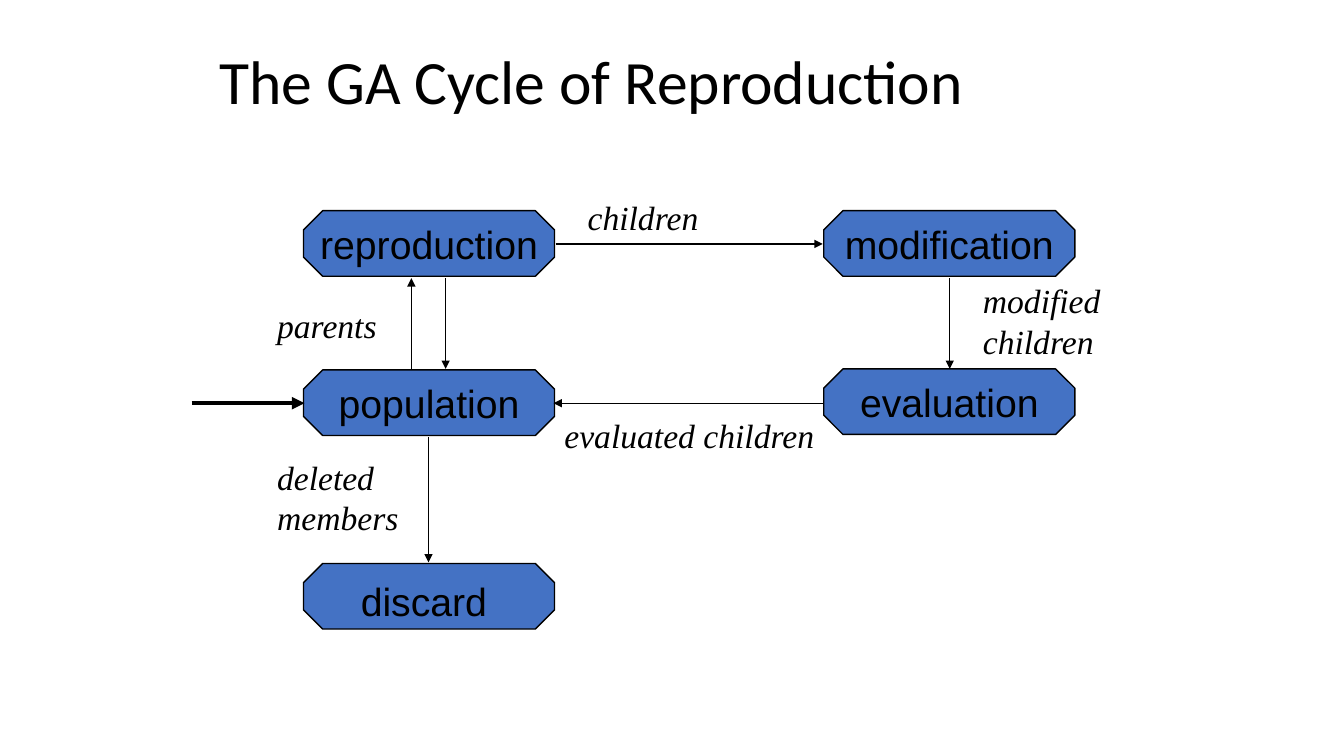
from dataclasses import dataclass

from lxml.etree import SubElement
from pptx import Presentation
from pptx.dml.color import RGBColor
from pptx.enum.shapes import MSO_CONNECTOR, MSO_SHAPE
from pptx.enum.text import MSO_ANCHOR, MSO_AUTO_SIZE, PP_ALIGN
from pptx.oxml.ns import qn
from pptx.slide import Slide
from pptx.text.text import TextFrame
from pptx.util import Inches, Pt

BLACK = "000000"
BLUE = "4472C4"
STAGE_WIDTH, STAGE_HEIGHT = 2.49, 0.65
LEFT_COLUMN, RIGHT_COLUMN = 3.01, 8.17
TOP_ROW = 2.09
CORNER_CUT = 0.293

TITLE_FORMAT = {"name": "Calibri", "size": Pt(44)}
STAGE_FORMAT = {"name": "Arial", "size": Pt(28)}
LABEL_FORMAT = {"name": "Times New Roman", "size": Pt(24), "italic": True}


@dataclass
class Stage:
    text: str
    left: float
    top: float


@dataclass
class Label:
    lines: list[str]
    left: float
    top: float
    width: float
    height: float
    font_format: dict


@dataclass
class Arrow:
    start: tuple[float, float]
    end: tuple[float, float]
    weight: float = 1


STAGES = [
    Stage("reproduction", LEFT_COLUMN, TOP_ROW),
    Stage("population", LEFT_COLUMN, 3.67),
    Stage("evaluation", RIGHT_COLUMN, 3.66),
    Stage("modification", RIGHT_COLUMN, TOP_ROW),
    Stage("", LEFT_COLUMN, 5.59),
]

LABELS = [
    Label(["discard"], 3.48, 5.68, 1.47, 0.57, STAGE_FORMAT),
    Label(["deleted", "members"], 2.65, 4.48, 1.42, 0.91, LABEL_FORMAT),
    Label(["parents"], 2.65, 2.98, 1.2, 0.5, LABEL_FORMAT),
    Label(["children"], 5.73, 1.9, 1.31, 0.5, LABEL_FORMAT),
    Label(["modified", "children"], 9.65, 2.73, 1.38, 0.91, LABEL_FORMAT),
    Label(["evaluated children"], 5.5, 4.07, 2.7, 0.5, LABEL_FORMAT),
]

ARROWS = [
    Arrow((5.51, 2.42), (8.16, 2.42)),
    Arrow((4.08, 3.66), (4.08, 2.76)),
    Arrow((4.42, 2.76), (4.42, 3.66)),
    Arrow((4.25, 4.34), (4.25, 5.58)),
    Arrow((8.17, 4), (5.49, 4)),
    Arrow((9.42, 2.76), (9.42, 3.66)),
    Arrow((1.9, 4), (3.02, 4), 3),
]


def color(value: str) -> RGBColor:
    return RGBColor.from_string(value)


def write(frame: TextFrame, lines: list[str], font_format: dict,
          alignment: PP_ALIGN = PP_ALIGN.LEFT) -> None:
    frame.text = "\n".join(lines)
    for paragraph in frame.paragraphs:
        paragraph.alignment = alignment
        font = paragraph.runs[0].font
        for name, value in font_format.items():
            setattr(font, name, value)
        font.color.rgb = color(BLACK)


def draw_title(slide: Slide, text: str) -> None:
    box = slide.shapes.add_textbox(Inches(2.08), Inches(0.25), Inches(9.08), Inches(1.17))
    frame = box.text_frame
    frame.word_wrap = True
    frame.vertical_anchor = MSO_ANCHOR.MIDDLE
    write(frame, [text], TITLE_FORMAT)
    frame.paragraphs[0].line_spacing = 0.9


def draw_stage(slide: Slide, stage: Stage) -> None:
    shape = slide.shapes.add_shape(
        MSO_SHAPE.OCTAGON, Inches(stage.left), Inches(stage.top),
        Inches(STAGE_WIDTH), Inches(STAGE_HEIGHT))
    shape.adjustments[0] = CORNER_CUT
    shape.shadow.inherit = False
    shape.fill.solid()
    shape.fill.fore_color.rgb = color(BLUE)
    shape.line.color.rgb = color(BLACK)
    shape.line.width = Pt(1)
    if stage.text:
        frame = shape.text_frame
        frame.word_wrap = False
        frame.vertical_anchor = MSO_ANCHOR.MIDDLE
        write(frame, [stage.text], STAGE_FORMAT, PP_ALIGN.CENTER)


def draw_label(slide: Slide, label: Label) -> None:
    box = slide.shapes.add_textbox(
        Inches(label.left), Inches(label.top), Inches(label.width), Inches(label.height))
    frame = box.text_frame
    frame.word_wrap = False
    frame.auto_size = MSO_AUTO_SIZE.SHAPE_TO_FIT_TEXT
    write(frame, label.lines, label.font_format)


def draw_arrow(slide: Slide, arrow: Arrow) -> None:
    points = [Inches(value) for value in arrow.start + arrow.end]
    connector = slide.shapes.add_connector(MSO_CONNECTOR.STRAIGHT, *points)
    connector.line.color.rgb = color(BLACK)
    connector.line.width = Pt(arrow.weight)
    properties = connector._element.spPr
    SubElement(properties.find(qn("a:ln")), qn("a:tailEnd"), type="triangle")
    SubElement(properties, qn("a:effectLst"))


def main() -> None:
    presentation = Presentation()
    presentation.slide_width = Inches(13.33)
    presentation.slide_height = Inches(7.5)
    slide = presentation.slides.add_slide(presentation.slide_layouts[6])
    draw_title(slide, "The GA Cycle of Reproduction")
    for stage in STAGES:
        draw_stage(slide, stage)
    for arrow in ARROWS:
        draw_arrow(slide, arrow)
    for label in LABELS:
        draw_label(slide, label)
    presentation.save("out.pptx")


if __name__ == "__main__":
    main()
